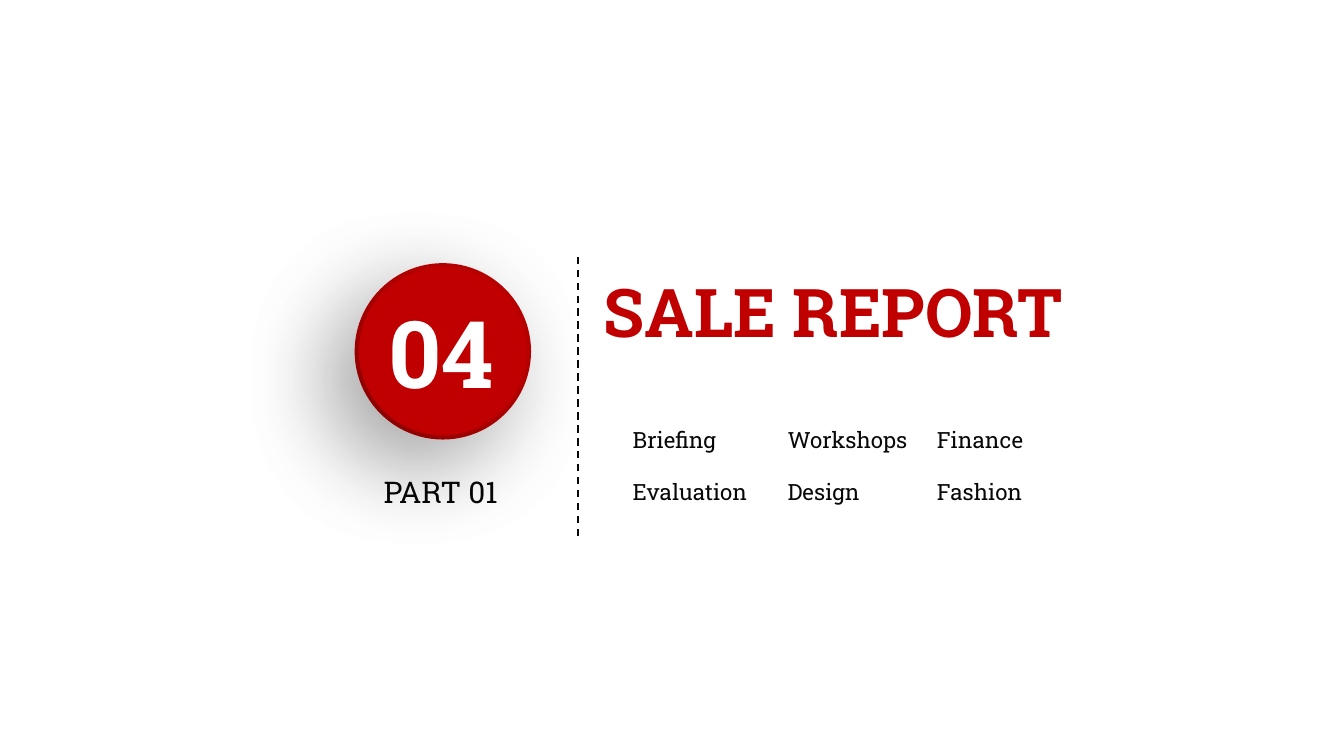
from lxml.etree import SubElement
from pptx import Presentation
from pptx.dml.color import RGBColor
from pptx.enum.dml import MSO_LINE
from pptx.enum.shapes import MSO_CONNECTOR, MSO_SHAPE
from pptx.enum.text import MSO_ANCHOR, PP_ALIGN
from pptx.oxml.ns import qn
from pptx.util import Pt

NUMBER = "04"
PART = "PART 01"
TITLE = "SALE REPORT"
TOPICS = [
    ["Briefing", "Workshops", "Finance"],
    ["Evaluation", "Design", "Fashion"],
]

THEME = {
    "font": "Roboto Slab",
    "red": RGBColor(0xC0, 0x00, 0x00),
    "black": RGBColor(0x08, 0x08, 0x08),
    "white": RGBColor(0xFF, 0xFF, 0xFF),
    "title_size": 36,
    "number_size": 50,
    "part_size": 16,
    "topic_size": 12,
}

# Lengths in points
SLIDE_SIZE = (720, 405)
BADGE_CENTER = (237.25, 188.25)
RING_DIAMETER = 94.5
DISC_DIAMETER = 90
RING_THICKNESS = 0.05
DIVIDER_X, DIVIDER_TOP, DIVIDER_BOTTOM = 309.6, 135.4, 287.3
TOPIC_LEFTS = (334, 417, 497)
TOPIC_TOP, TOPIC_PITCH = 226, 27.5
TOPIC_SIZE = (80, 19.5)


def add_text(slide, text, box, size, color, bold=False,
             align=PP_ALIGN.LEFT, margins=(0, 0), wrap=True):
    """Add one line of text; margins are (horizontal, vertical)."""
    text_box = slide.shapes.add_textbox(*map(Pt, box))
    frame = text_box.text_frame
    frame.word_wrap = wrap
    frame.vertical_anchor = MSO_ANCHOR.MIDDLE
    frame.margin_left = frame.margin_right = Pt(margins[0])
    frame.margin_top = frame.margin_bottom = Pt(margins[1])
    paragraph = frame.paragraphs[0]
    paragraph.text = text
    paragraph.alignment = align
    font = paragraph.font
    font.name, font.size, font.bold = THEME["font"], Pt(size), bold
    font.color.rgb = color


def add_soft_shadow(shape):
    shape.shadow.inherit = False
    effects = shape.element.spPr.find(qn("a:effectLst"))
    shadow = SubElement(effects, qn("a:outerShdw"), blurRad=str(Pt(50)),
                        dist=str(Pt(20)), dir=str(135 * 60000),
                        algn="tr", rotWithShape="0")
    color = SubElement(shadow, qn("a:srgbClr"), val="000000")
    SubElement(color, qn("a:alpha"), val="35000")


def add_badge(slide):
    group = slide.shapes.add_group_shape()
    for preset, diameter in ((MSO_SHAPE.DONUT, RING_DIAMETER),
                             (MSO_SHAPE.OVAL, DISC_DIAMETER)):
        left, top = (Pt(center - diameter / 2) for center in BADGE_CENTER)
        circle = group.shapes.add_shape(preset, left, top, Pt(diameter), Pt(diameter))
        circle.fill.solid()
        circle.fill.fore_color.rgb = THEME["red"]
        circle.line.fill.background()
        add_soft_shadow(circle)
        if preset == MSO_SHAPE.DONUT:
            circle.adjustments[0] = RING_THICKNESS


def add_divider(slide):
    divider = slide.shapes.add_connector(
        MSO_CONNECTOR.STRAIGHT, Pt(DIVIDER_X), Pt(DIVIDER_BOTTOM),
        Pt(DIVIDER_X), Pt(DIVIDER_TOP))
    divider.line.color.rgb = THEME["black"]
    divider.line.width = Pt(1)
    divider.line.dash_style = MSO_LINE.DASH
    SubElement(divider.element.spPr, qn("a:effectLst"))


def add_topics(slide):
    for row, topics in enumerate(TOPICS):
        for left, topic in zip(TOPIC_LEFTS, topics):
            box = (left, TOPIC_TOP + row * TOPIC_PITCH, *TOPIC_SIZE)
            add_text(slide, topic, box, THEME["topic_size"], THEME["black"],
                     margins=(5, 2.5))


def main():
    presentation = Presentation()
    presentation.slide_width, presentation.slide_height = map(Pt, SLIDE_SIZE)
    slide = presentation.slides.add_slide(presentation.slide_layouts[6])

    add_text(slide, TITLE, (310.3, 141.1, 272.2, 51.1), THEME["title_size"],
             THEME["red"], bold=True, align=PP_ALIGN.CENTER,
             margins=(7.2, 3.6), wrap=False)
    add_divider(slide)
    add_text(slide, PART, (205.5, 253.5, 71.5, 19.5), THEME["part_size"],
             THEME["black"])
    add_badge(slide)
    add_topics(slide)
    add_text(slide, NUMBER, (208, 157.7, 71.5, 60.5), THEME["number_size"],
             THEME["white"], bold=True)

    presentation.save("out.pptx")


if __name__ == "__main__":
    main()
